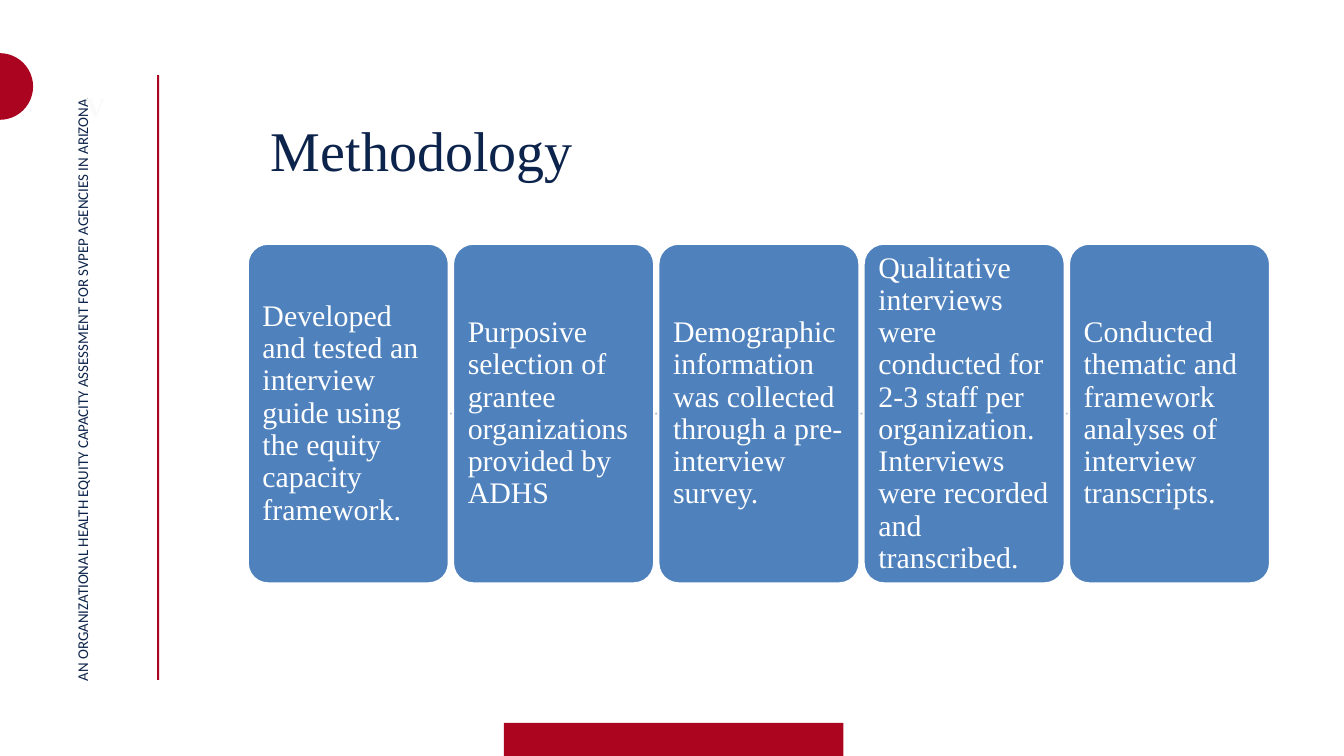
import pptx
import pptx.util
import pptx.dml.color
import pptx.enum.shapes
import pptx.enum.text

Cm, Pt = pptx.util.Cm, pptx.util.Pt
SHAPE = pptx.enum.shapes.MSO_SHAPE
ALIGN = pptx.enum.text.PP_ALIGN
ANCHOR = pptx.enum.text.MSO_ANCHOR

TITLE = "Methodology"
SIDEBAR = "AN ORGANIZATIONAL HEALTH EQUITY CAPACITY ASSESSMENT FOR SVPEP AGENCIES IN ARIZONA"
MARK = "V"
STEPS = [
    "Developed and tested an interview guide using the equity capacity framework.",
    "Purposive selection of grantee organizations provided by ADHS",
    "Demographic information was collected through a pre-interview survey.",
    "Qualitative interviews were conducted for 2-3 staff per organization. "
    "Interviews were recorded and transcribed.",
    "Conducted thematic and framework analyses of interview transcripts.",
]

THEME = {
    "red": "AB0420", "bar": "AB0520", "card": "4F81BD", "edge": "FFFFFF", "arrow": "B3C1DB",
    "title": {"name": "Times New Roman", "size": Pt(60), "color": "0C234B"},
    "step": {"name": "Times New Roman", "size": Pt(32), "color": "FFFFFF"},
    "sidebar": {"name": "Calibri", "size": Pt(16), "color": "0C234A"},
    "mark": {"name": "Times New Roman", "size": Pt(30), "color": "FAFAFA", "bold": True},
}

# Left, top, width, height in cm
DECOR = [
    (SHAPE.RECTANGLE, (5.94, 2.84, 0.08, 22.86), "red"),
    (SHAPE.RECTANGLE, (19.05, 27.33, 12.83, 1.37), "bar"),
    (SHAPE.OVAL, (-1.27, 2.01, 2.52, 2.52), "red"),
]
TITLE_BOX = (10.21, 2.79, 37.82, 4.45)
SIDEBAR_BOX = (2.77, 2.84, 0.84, 22.91)
MARK_BOX = (3.2, 3.35, 0.76, 1.35)
CARD_LEFT, CARD_TOP, CARD_W, CARD_H, CARD_PITCH = 9.37, 9.22, 7.59, 12.83, 7.76
ARROW_W, ARROW_H = 0.08, 0.1


def rgb(value):
    return pptx.dml.color.RGBColor.from_string(value)


def place(sp, box):
    sp.left, sp.top, sp.width, sp.height = map(Cm, box)


def add_filled(s, kind, box, color):
    sp = s.shapes.add_shape(kind, *map(Cm, box))
    sp.shadow.inherit = False
    sp.fill.solid()
    sp.fill.fore_color.rgb = rgb(THEME[color])
    sp.line.fill.background()
    return sp


def write(sp, text, style, inset=(0, 0, 0, 0), anchor=ANCHOR.TOP, spacing=None, wrap=True):
    """Fill a shape with one left-aligned paragraph in a theme style; return its run."""
    tf = sp.text_frame
    frame = {"word_wrap": wrap, "vertical_anchor": anchor,
             "auto_size": pptx.enum.text.MSO_AUTO_SIZE.NONE}
    sides = ("margin_left", "margin_top", "margin_right", "margin_bottom")
    frame.update(zip(sides, map(Cm, inset)))
    for key, value in frame.items():
        setattr(tf, key, value)
    p = tf.paragraphs[0]
    p.alignment = ALIGN.LEFT
    if spacing:
        p.line_spacing = spacing
    r = p.add_run()
    r.text = text
    for key, value in THEME[style].items():
        if key == "color":
            r.font.color.rgb = rgb(value)
        else:
            setattr(r.font, key, value)
    return r


def add_steps(s):
    gap = CARD_PITCH - CARD_W
    for i, step in enumerate(STEPS):
        left = CARD_LEFT + i * CARD_PITCH
        if i:
            arrow = (left - (gap + ARROW_W) / 2, CARD_TOP + (CARD_H - ARROW_H) / 2,
                     ARROW_W, ARROW_H)
            add_filled(s, SHAPE.RIGHT_ARROW, arrow, "arrow").adjustments[0] = 0.6
        card = add_filled(s, SHAPE.ROUNDED_RECTANGLE, (left, CARD_TOP, CARD_W, CARD_H), "card")
        card.adjustments[0] = 0.1
        card.line.color.rgb = rgb(THEME["edge"])
        card.line.width = Pt(2)
        write(card, step, "step", (0.33,) * 4, ANCHOR.MIDDLE, 0.9)


def main():
    prs = pptx.Presentation()
    prs.slide_width, prs.slide_height = Cm(50.8), Cm(28.58)
    s = prs.slides.add_slide(prs.slide_layouts[5])

    for kind, box, color in DECOR:
        add_filled(s, kind, box, color)

    sidebar = s.shapes.add_textbox(*map(Cm, SIDEBAR_BOX))
    write(sidebar, SIDEBAR, "sidebar", (0, 0.03, 0, 0))
    sidebar.text_frame._txBody.bodyPr.set("vert", "vert270")

    place(s.shapes.title, TITLE_BOX)
    write(s.shapes.title, TITLE, "title", (0.03, 0.43, 0, 0), spacing=Pt(104.1))

    mark = s.shapes.add_textbox(*map(Cm, MARK_BOX))
    write(mark, MARK, "mark", (0.03, 0.03, 0, 0), wrap=False)

    add_steps(s)
    prs.save("out.pptx")


if __name__ == "__main__":
    main()
